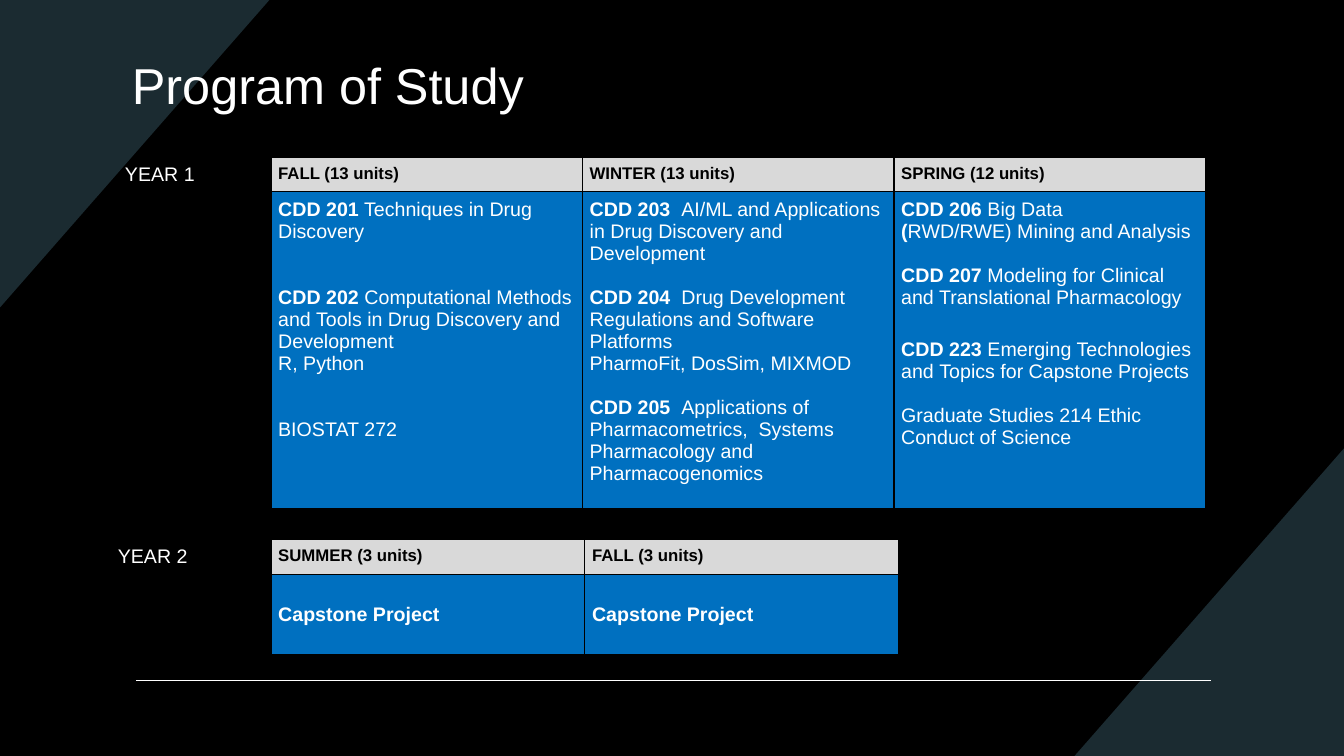
"""Build the Program of Study slide with its two yearly course tables."""
from dataclasses import dataclass

from lxml import etree
from pptx import Presentation
from pptx import util as u
from pptx.dml.color import RGBColor
from pptx.enum import shapes, text
from pptx.oxml.ns import qn

BLACK, WHITE, SLATE = "000000", "FFFFFF", "1B2B31"
GREY, BLUE = "D9D9D9", "0070C0"
FONT = "Arial"
INSET = u.Cm(0.18)
LINE = 15.7
TIE, HARD_SPACE = "~", chr(160)


@dataclass
class Entry:
    markup: str
    gap: float = 0


@dataclass
class Term:
    heading: str
    entries: list[Entry]


@dataclass
class Year:
    label: str
    label_left: float
    top: float
    col_width: float
    row_heights: tuple[float, float]
    anchor: text.MSO_ANCHOR
    terms: list[Term]


CAPSTONE = [Entry("Capstone Project")]
YEARS = [
    Year("YEAR 1", 2.9, 3.96, 7.85, (0.86, 7.57), text.MSO_ANCHOR.TOP, [
        Term("FALL (13 units)", [
            Entry("CDD 201| Techniques in Drug Discovery"),
            Entry("CDD 202| Computational Methods and Tools in Drug Discovery and Development", 2 * LINE),
            Entry("|R, Python"),
            Entry("|BIOSTAT 272", 2 * LINE),
        ]),
        Term("WINTER (13 units)", [
            Entry("CDD 203 |~AI/ML and Applications in Drug Discovery and Development"),
            Entry("CDD 204|~ Drug Development Regulations and Software Platforms", LINE),
            Entry("|PharmoFit, DosSim, MIXMOD"),
            Entry("CDD 205~ |Applications of Pharmacometrics, ~Systems Pharmacology and Pharmacogenomics", LINE),
        ]),
        Term("SPRING (12 units)", [
            Entry("CDD 206 |Big Data| (|RWD/RWE)~Mining and Analysis"),
            Entry("CDD 207| Modeling for Clinical and Translational Pharmacology", LINE),
            Entry("CDD 223 |Emerging Technologies and~Topics for Capstone Projects", 21),
            Entry("|Graduate Studies 214 Ethic Conduct of Science", LINE),
        ]),
    ]),
    Year("YEAR 2", 2.72, 13.58, 7.91, (0.89, 2.03), text.MSO_ANCHOR.MIDDLE, [
        Term("SUMMER (3 units)", CAPSTONE),
        Term("FALL (3 units)", CAPSTONE),
    ]),
]


def rgb(value: str) -> RGBColor:
    return RGBColor.from_string(value)


def add_run(p, content: str, *, size: float = 14, color: str = WHITE, bold: bool = False) -> None:
    r = p.add_run()
    r.text = content.replace(TIE, HARD_SPACE)
    r.font.name, r.font.size, r.font.bold = FONT, u.Pt(size), bold
    r.font.color.rgb = rgb(color)


def add_triangle(s, points: list[tuple[float, float]]) -> None:
    corners = [(u.Cm(x), u.Cm(y)) for x, y in points]
    builder = s.shapes.build_freeform(*corners[0])
    builder.add_line_segments(corners[1:], close=True)
    sp = builder.convert_to_shape()
    sp.shadow.inherit = False
    sp.fill.solid()
    sp.fill.fore_color.rgb = rgb(SLATE)
    sp.line.fill.background()


def add_rule(s) -> None:
    y = u.Cm(17.15)
    line = s.shapes.add_connector(shapes.MSO_CONNECTOR.STRAIGHT, u.Cm(3.43), y, u.Cm(30.53), y)
    line.line.color.rgb = rgb(WHITE)
    line.line.width = u.Pt(1)
    etree.SubElement(line._element.spPr, qn("a:effectLst"))


def add_title(s) -> None:
    title = s.shapes.title
    s.shapes._spTree.append(title._element)
    title.left, title.top, title.width, title.height = u.Cm(3.07), u.Cm(1.24), u.Cm(25.32), u.Cm(1.78)
    tf = title.text_frame
    tf.vertical_anchor = text.MSO_ANCHOR.MIDDLE
    p = tf.paragraphs[0]
    p.alignment = text.PP_ALIGN.LEFT
    add_run(p, "Program of Study", size=36)


def style_cell(cell, fill: str, anchor: text.MSO_ANCHOR) -> None:
    tc_pr = cell._tc.get_or_add_tcPr()
    for side in ("lnL", "lnR", "lnT", "lnB"):
        border = etree.SubElement(tc_pr, qn(f"a:{side}"), w=str(u.Pt(1)))
        solid = etree.SubElement(border, qn("a:solidFill"))
        etree.SubElement(solid, qn("a:srgbClr"), val=BLACK)
    cell.fill.solid()
    cell.fill.fore_color.rgb = rgb(fill)
    cell.margin_left = cell.margin_right = cell.margin_top = cell.margin_bottom = INSET
    cell.vertical_anchor = anchor


def fill_entries(tf, entries: list[Entry]) -> None:
    for i, entry in enumerate(entries):
        p = tf.add_paragraph() if i else tf.paragraphs[0]
        p.space_before = u.Pt(entry.gap)
        for j, part in enumerate(entry.markup.split("|")):
            if part:
                add_run(p, part, bold=j % 2 == 0)


def add_year(s, year: Year) -> None:
    box = s.shapes.add_textbox(u.Cm(year.label_left), u.Cm(year.top), u.Cm(3.2), u.Cm(0.86))
    box.text_frame.word_wrap = True
    add_run(box.text_frame.paragraphs[0], year.label)

    count = len(year.terms)
    table = s.shapes.add_table(2, count, u.Cm(6.83), u.Cm(year.top), u.Cm(year.col_width * count),
                               u.Cm(sum(year.row_heights))).table
    table.first_row = table.horz_banding = False
    for row, height in zip(table.rows, year.row_heights):
        row.height = u.Cm(height)
    for i, term in enumerate(year.terms):
        table.columns[i].width = u.Cm(year.col_width)
        head, body = table.cell(0, i), table.cell(1, i)
        style_cell(head, GREY, text.MSO_ANCHOR.TOP)
        style_cell(body, BLUE, year.anchor)
        add_run(head.text_frame.paragraphs[0], term.heading, size=12, color=BLACK, bold=True)
        fill_entries(body.text_frame, term.entries)


def main() -> None:
    prs = Presentation()
    prs.slide_width, prs.slide_height = u.Cm(33.87), u.Cm(19.05)
    s = prs.slides.add_slide(prs.slide_layouts[5])
    s.background.fill.solid()
    s.background.fill.fore_color.rgb = rgb(BLACK)
    add_triangle(s, [(33.87, 11.3), (33.87, 19.05), (27.08, 19.05)])
    add_triangle(s, [(0, 7.75), (0, 0), (6.79, 0)])
    add_rule(s)
    add_title(s)
    for year in YEARS:
        add_year(s, year)
    prs.save("out.pptx")


if __name__ == "__main__":
    main()
